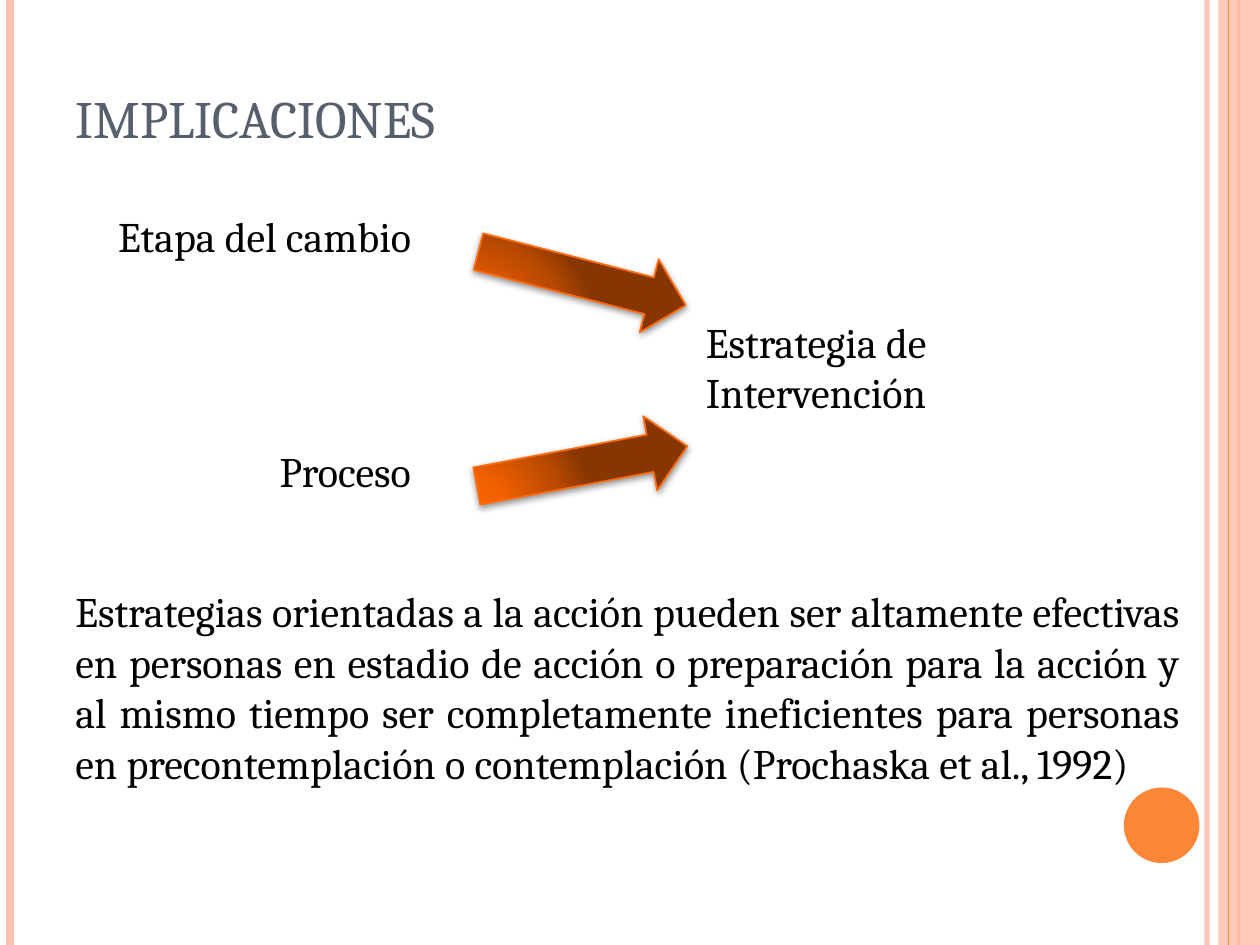
import pptx
import pptx.util
import pptx.dml.color
import pptx.enum.shapes
import pptx.enum.text
import pptx.oxml
import pptx.oxml.ns

WIDE, HIGH = 10, 7.5
FONT = "Cambria"
HUES = {
    "ink": "000000", "title": "575F6D", "pale": "FEC3AE", "orange": "FE8637",
    "edge": "FF6B0A", "glow": "FD6400", "warm": "F46100", "rust": "B74900", "dark": "873600",
}
STOPS = [(0, "glow"), (30, "warm"), (75, "rust"), (100, "dark")]
SPACE = pptx.oxml.ns.nsdecls("a")
SHAPES = pptx.enum.shapes.MSO_SHAPE
ALIGN = pptx.enum.text.PP_ALIGN
ANCHOR = pptx.enum.text.MSO_ANCHOR


def inch(*sizes):
    """Turn numbers of inches into lengths."""
    return [pptx.util.Inches(size) for size in sizes]


def hue(name):
    """Return a named colour."""
    return pptx.dml.color.RGBColor.from_string(HUES[name])


def fade(part, share):
    """Set the opacity, in percent, of the colour within an element."""
    tint = next(part.iter(pptx.oxml.ns.qn("a:srgbClr")))
    tint.append(pptx.oxml.parse_xml(f'<a:alpha {SPACE} val="{share * 1000}"/>'))


def write(frame, text, size=24, color="ink", align=ALIGN.LEFT, anchor=ANCHOR.TOP,
          wrap=True, before=6, hang=0, small=False):
    """Fill a text frame with one formatted paragraph."""
    frame.auto_size = pptx.enum.text.MSO_AUTO_SIZE.NONE
    frame.word_wrap = wrap
    frame.vertical_anchor = anchor
    para = frame.paragraphs[0]
    para.alignment = align
    para.space_before = pptx.util.Pt(before)
    if hang:
        form = para._p.get_or_add_pPr()
        form.set("marL", str(pptx.util.Inches(hang)))
        form.set("indent", str(-pptx.util.Inches(hang)))
    run = para.add_run()
    run.text = text
    run.font.name = FONT
    run.font.size = pptx.util.Pt(size)
    run.font.color.rgb = hue(color)
    if small:
        run.font._element.set("cap", "small")


def label(slide, box, text, **form):
    """Add a text box."""
    write(slide.shapes.add_textbox(*inch(*box)).text_frame, text, **form)


def rail(slide, x, top, tall, color, weight, share=100):
    """Draw one upright line."""
    line = slide.shapes.add_connector(
        pptx.enum.shapes.MSO_CONNECTOR.STRAIGHT, *inch(x, top, x, top + tall))
    line.line.color.rgb = hue(color)
    line.line.width = pptx.util.Pt(weight)
    if share < 100:
        fade(line.line._get_or_add_ln(), share)
    line._element.spPr.append(pptx.oxml.parse_xml(f"<a:effectLst {SPACE}/>"))


def block(slide, kind, box, color, share=100):
    """Draw a plain filled shape."""
    shape = slide.shapes.add_shape(kind, *inch(*box))
    shape.shadow.inherit = False
    shape.fill.solid()
    shape.fill.fore_color.rgb = hue(color)
    shape.line.fill.background()
    if share < 100:
        fade(shape._element.spPr, share)


def frame(slide, box):
    """Draw the stripes and the disc around the page."""
    left, top, wide, tall = box
    right = left + wide
    rail(slide, right - 0.42, top, tall, "pale", 3, 93)
    rail(slide, left + 0.08, top, tall, "pale", 4.5)
    rail(slide, right - 0.17, top, tall, "orange", 1.5)
    block(slide, SHAPES.RECTANGLE, (right - 0.33, top, 0.33, tall), "pale", 87)
    rail(slide, right - 0.25, top, tall, "orange", 0.75)
    block(slide, SHAPES.OVAL, (right - 1.08, top + tall - 1.25, 0.6, 0.6), "orange")


def head(slide, box, text):
    """Place the title."""
    title = slide.shapes.title
    title.left, title.top, title.width, title.height = inch(*box)
    write(title.text_frame, text, size=30, color="title", anchor=ANCHOR.BOTTOM,
          before=0, small=True)


def arrow(slide, box, turn):
    """Draw a turned block arrow with a glowing fill and a soft shadow."""
    shape = slide.shapes.add_shape(SHAPES.RIGHT_ARROW, *inch(*box))
    shape.rotation = turn
    shape.line.color.rgb = hue("edge")
    shape.line.width = pptx.util.Pt(1)
    stops = "".join(f'<a:gs pos="{at * 1000}"><a:srgbClr val="{HUES[name]}"/></a:gs>'
                    for at, name in STOPS)
    fill = pptx.oxml.parse_xml(
        f'<a:gradFill {SPACE} rotWithShape="1"><a:gsLst>{stops}</a:gsLst><a:path path="circle">'
        '<a:fillToRect l="5000" t="100000" r="120000" b="10000"/></a:path></a:gradFill>')
    shade = pptx.oxml.parse_xml(
        f'<a:effectLst {SPACE}><a:outerShdw blurRad="{pptx.util.Pt(4)}" '
        f'dist="{pptx.util.Pt(1.6)}" dir="5400000" rotWithShape="0">'
        '<a:srgbClr val="000000"><a:alpha val="42000"/></a:srgbClr></a:outerShdw></a:effectLst>')
    look = shape._element.spPr
    look.find(pptx.oxml.ns.qn("a:prstGeom")).addnext(fill)
    look.append(shade)


def flow(slide, box):
    """Show two inputs that lead to one strategy."""
    left, top, wide, tall = box
    text = wide * 0.44
    label(slide, (left, top, text, 0.78), "Etapa del cambio", hang=0.3)
    label(slide, (left + wide - text, top + 0.84, text, 0.78), "Estrategia de Intervención")
    label(slide, (left + 1.28, top + tall - 0.5, 1.39, 0.5), "Proceso", wrap=False, before=0)
    for drop, turn in ((0.29, 14.5), (1.78, 349.3)):
        arrow(slide, (left + 2.93, top + drop, 1.7, 0.6), turn)


def main():
    """Build and save the slide."""
    deck = pptx.Presentation()
    deck.slide_width, deck.slide_height = inch(WIDE, HIGH)
    slide = deck.slides.add_slide(deck.slide_layouts[5])
    frame(slide, (0, 0, WIDE, HIGH))
    head(slide, (0.5, 0.5, 8.17, 0.73), "IMPLICACIONES")
    flow(slide, (0.84, 1.62, 8.33, 2.37))
    label(slide, (0.5, 4.6, 8.96, 2.25),
          "Estrategias orientadas a la acción pueden ser altamente efectivas en personas "
          "en estadio de acción o preparación para la acción y al mismo tiempo ser "
          "completamente ineficientes para personas en precontemplación o contemplación "
          "(Prochaska et al., 1992)", align=ALIGN.JUSTIFY)
    deck.save("out.pptx")


if __name__ == "__main__":
    main()
